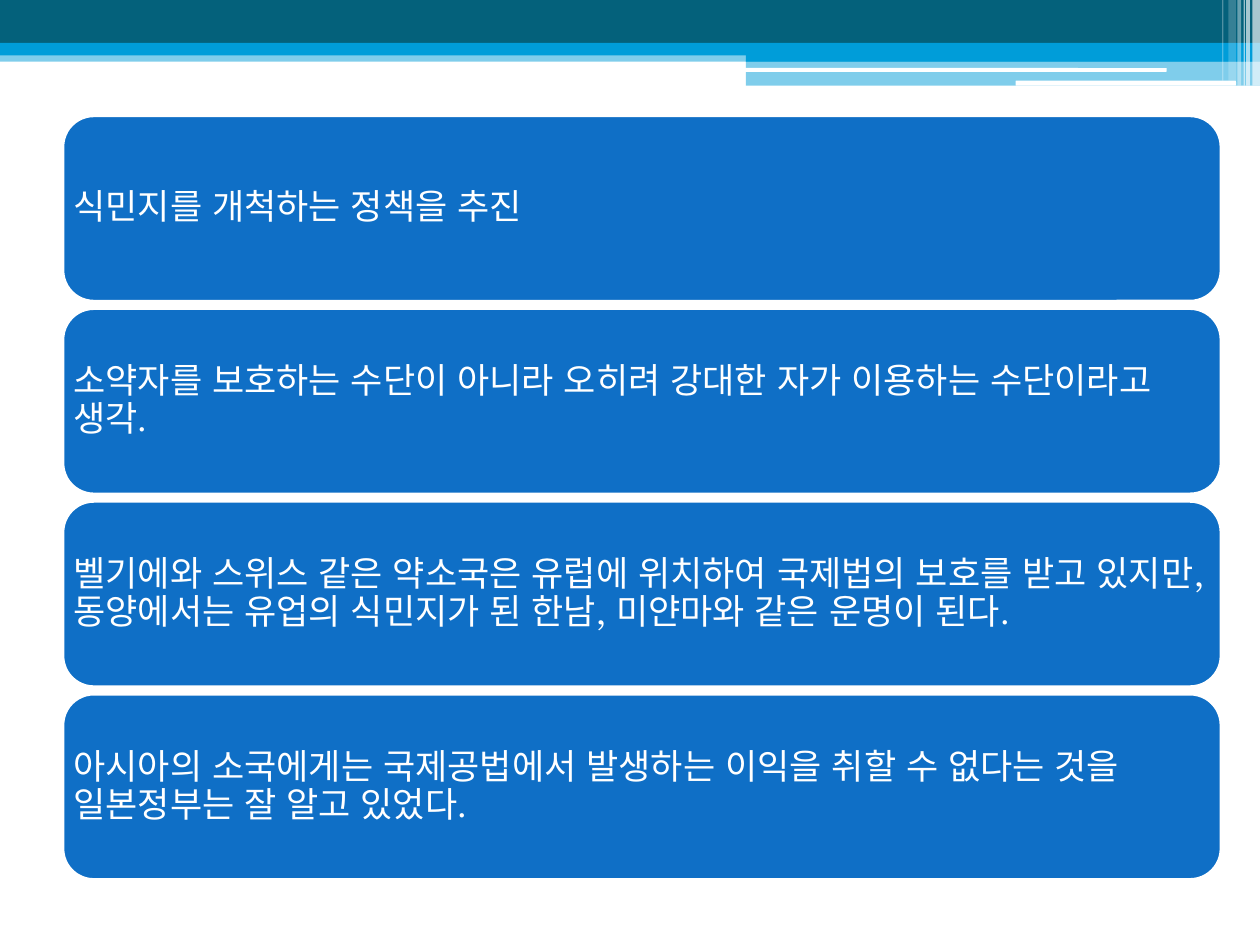
from lxml import etree
from pptx import Presentation
from pptx.dml.color import RGBColor
from pptx.enum.lang import MSO_LANGUAGE_ID
from pptx.enum.shapes import MSO_SHAPE
from pptx.enum.text import MSO_ANCHOR, PP_ALIGN
from pptx.oxml.ns import qn
from pptx.util import Inches, Pt

RECTANGLE = MSO_SHAPE.RECTANGLE
ROUNDED = MSO_SHAPE.ROUNDED_RECTANGLE
MIDDLE = MSO_ANCHOR.MIDDLE
LEFT = PP_ALIGN.LEFT
KOREAN = MSO_LANGUAGE_ID.KOREAN

COLORS = {"teal": "04617B", "sky": "009DD9", "blue": "0F6FC6", "white": "FFFFFF"}
FONT = "TeX Gyre Schola"

STATEMENTS = [
    "식민지를 개척하는 정책을 추진",
    "소약자를 보호하는 수단이 아니라 오히려 강대한 자가 이용하는 수단이라고 생각.",
    "벨기에와 스위스 같은 약소국은 유럽에 위치하여 국제법의 보호를 받고 있지만, "
    "동양에서는 유업의 식민지가 된 한남, 미얀마와 같은 운명이 된다.",
    "아시아의 소국에게는 국제공법에서 발생하는 이익을 취할 수 없다는 것을 "
    "일본정부는 잘 알고 있었다.",
]

BANDS = [
    (RECTANGLE, 0, 0.4, 10, 0.09, "sky", 50),
    (RECTANGLE, 0, 0, 10, 0.34, "teal", 100),
    (RECTANGLE, 0, 0.34, 10, 0.1, "sky", 100),
    (RECTANGLE, 5.92, 0.39, 4.08, 0.1, "sky", 100),
    (RECTANGLE, 5.92, 0.48, 4.08, 0.2, "sky", 50),
    (ROUNDED, 5.91, 0.54, 3.35, 0.03, "white", 100),
    (ROUNDED, 8.06, 0.64, 1.75, 0.04, "white", 100),
]

STRIPES = [
    (9.94, 0.06, 0.68, 65),
    (9.89, 0.03, 0.68, 65),
    (9.87, 0.01, 0.68, 60),
    (9.82, 0.03, 0.68, 40),
    (9.75, 0.06, 0.64, 20),
    (9.7, 0.01, 0.64, 30),
]

CARD_LEFT, CARD_TOP, CARD_WIDTH, CARD_HEIGHT = 0.5, 0.92, 9.19, 1.47
CARD_PITCH = 1.53
CARD_INSET = 0.01


def add_filled_shape(slide, kind, left, top, width, height, color, opacity=100):
    shape = slide.shapes.add_shape(
        kind, Inches(left), Inches(top), Inches(width), Inches(height)
    )
    shape.shadow.inherit = False
    shape.line.fill.background()
    shape.fill.solid()
    shape.fill.fore_color.rgb = RGBColor.from_string(COLORS[color])
    if opacity < 100:
        color_element = shape.fill._xPr.find(qn("a:solidFill"))[0]
        etree.SubElement(color_element, qn("a:alpha")).set("val", str(opacity * 1000))
    return shape


def add_card(slide, top, text):
    card = add_filled_shape(
        slide, ROUNDED, CARD_LEFT, top, CARD_WIDTH, CARD_HEIGHT, "blue"
    )
    card.line.color.rgb = RGBColor.from_string(COLORS["white"])
    card.line.width = Pt(1.5)
    frame = card.text_frame
    frame.word_wrap = True
    frame.vertical_anchor = MIDDLE
    frame.margin_left = frame.margin_right = Inches(CARD_INSET)
    frame.margin_top = frame.margin_bottom = Inches(CARD_INSET)
    paragraph = frame.paragraphs[0]
    paragraph.alignment = LEFT
    paragraph.line_spacing = 0.9
    run = paragraph.add_run()
    run.text = text
    run.font.name = FONT
    run.font.size = Pt(20)
    run.font.language_id = KOREAN
    run.font.color.rgb = RGBColor.from_string(COLORS["white"])


def main():
    presentation = Presentation()
    presentation.slide_width = Inches(10)
    presentation.slide_height = Inches(7.5)
    slide = presentation.slides.add_slide(presentation.slide_layouts[6])
    for band in BANDS:
        add_filled_shape(slide, *band)
    for left, width, height, opacity in STRIPES:
        add_filled_shape(slide, RECTANGLE, left, 0, width, height, "white", opacity)
    for index, statement in enumerate(STATEMENTS):
        add_card(slide, CARD_TOP + index * CARD_PITCH, statement)
    presentation.save("out.pptx")


if __name__ == "__main__":
    main()
